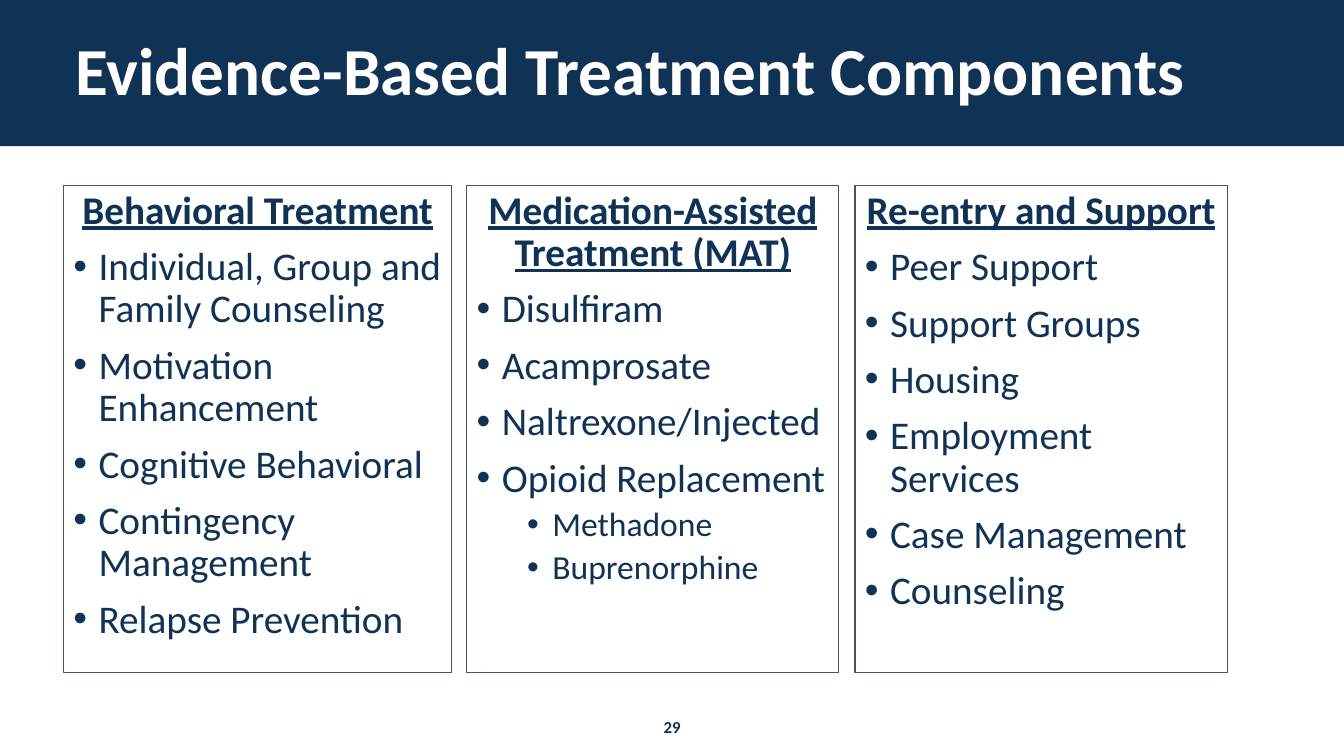
import dataclasses

import lxml.etree
import pptx
import pptx.dml.color
import pptx.enum.shapes
import pptx.enum.text
import pptx.oxml.ns
import pptx.util

PX = 9144  # EMU per px, 100 px to the inch
ALIGN = pptx.enum.text.PP_ALIGN
ANCHOR = pptx.enum.text.MSO_ANCHOR


@dataclasses.dataclass(frozen=True)
class Theme:
    font: str = "Calibri"
    navy: str = "103255"
    white: str = "FFFFFF"
    border: str = "44546A"
    title: int = 48
    body: int = 28
    sub: int = 24
    number: int = 12


THEME = Theme()

# Left, width, heading, then (level, text) items
COLUMNS = [
    (63, 385, "Behavioral Treatment", [
        (0, "Individual, Group and Family Counseling"),
        (0, "Motivation Enhancement"),
        (0, "Cognitive Behavioral"),
        (0, "Contingency Management"),
        (0, "Relapse Prevention"),
    ]),
    (463, 369, "Medication-Assisted Treatment (MAT)", [
        (0, "Disulfiram"),
        (0, "Acamprosate"),
        (0, "Naltrexone/Injected"),
        (0, "Opioid Replacement"),
        (1, "Methadone"),
        (1, "Buprenorphine"),
    ]),
    (848, 369, "Re-entry and Support", [
        (0, "Peer Support"),
        (0, "Support Groups"),
        (0, "Housing"),
        (0, "Employment Services"),
        (0, "Case Management"),
        (0, "Counseling"),
    ]),
]


def px(*lengths):
    return [pptx.util.Emu(n * PX) for n in lengths]


def rgb(color):
    return pptx.dml.color.RGBColor.from_string(color)


def write(p, text, size=THEME.body, color=THEME.navy, bold=False,
          underline=False, align=ALIGN.LEFT, spacing=0.9, before=0):
    p.alignment = align
    p.line_spacing = spacing
    p.space_before = pptx.util.Pt(before)
    r = p.add_run()
    r.text = text
    r.font.name = THEME.font
    r.font.size = pptx.util.Pt(size)
    r.font.color.rgb = rgb(color)
    r.font.bold = bold
    r.font.underline = underline


def add_bullet(p, level):
    p.level = level
    left, hang = px(25 + 50 * level, 25)
    pPr = p._p.get_or_add_pPr()
    pPr.set("marL", str(left))
    pPr.set("indent", str(-hang))
    for tag, name, value in (("a:buFont", "typeface", "Arial"),
                             ("a:buChar", "char", "•")):
        bu = lxml.etree.SubElement(pPr, pptx.oxml.ns.qn(tag))
        bu.set(name, value)


def add_rect(s, box, fill=None, line=None):
    sp = s.shapes.add_shape(
        pptx.enum.shapes.MSO_SHAPE.RECTANGLE, *px(*box))
    sp.shadow.inherit = False
    if fill:
        sp.fill.solid()
        sp.fill.fore_color.rgb = rgb(fill)
    else:
        sp.fill.background()
    if line:
        sp.line.color.rgb = rgb(line)
        sp.line.width = pptx.util.Pt(0.75)
    else:
        sp.line.fill.background()
    return sp


def add_title(s, text, box):
    sp = s.shapes.title
    sp.left, sp.top, sp.width, sp.height = px(*box)
    # Bring the title in front of the band
    sp.element.getparent().append(sp.element)
    tf = sp.text_frame
    tf.auto_size = pptx.enum.text.MSO_AUTO_SIZE.NONE
    tf.vertical_anchor = ANCHOR.MIDDLE
    write(tf.paragraphs[0], text, size=THEME.title, color=THEME.white,
          bold=True)


def add_column(s, left, width, heading, items):
    tf = add_rect(s, (left, 184, width, 483), line=THEME.border).text_frame
    tf.word_wrap = True
    tf.vertical_anchor = ANCHOR.TOP
    write(tf.paragraphs[0], heading, bold=True, underline=True,
          align=ALIGN.CENTER)
    for level, text in items:
        p = tf.add_paragraph()
        add_bullet(p, level)
        write(p, text, size=THEME.sub if level else THEME.body,
              before=5 if level else 10)


def add_page_number(s, text, box):
    tf = s.shapes.add_textbox(*px(*box)).text_frame
    tf.word_wrap = True
    write(tf.paragraphs[0], text, size=THEME.number, bold=True,
          align=ALIGN.CENTER, spacing=1.0)


def main():
    prs = pptx.Presentation()
    prs.slide_width, prs.slide_height = px(1333, 750)
    s = prs.slides.add_slide(prs.slide_layouts[5])

    # Header band and title
    add_rect(s, (0, 0, 1333, 145), fill=THEME.navy)
    add_title(s, "Evidence-Based Treatment Components", (65, 40, 1204, 67))

    # Three treatment columns
    for column in COLUMNS:
        add_column(s, *column)

    # Footer
    add_page_number(s, "29", (609, 706, 115, 30))
    prs.save("out.pptx")


if __name__ == "__main__":
    main()
